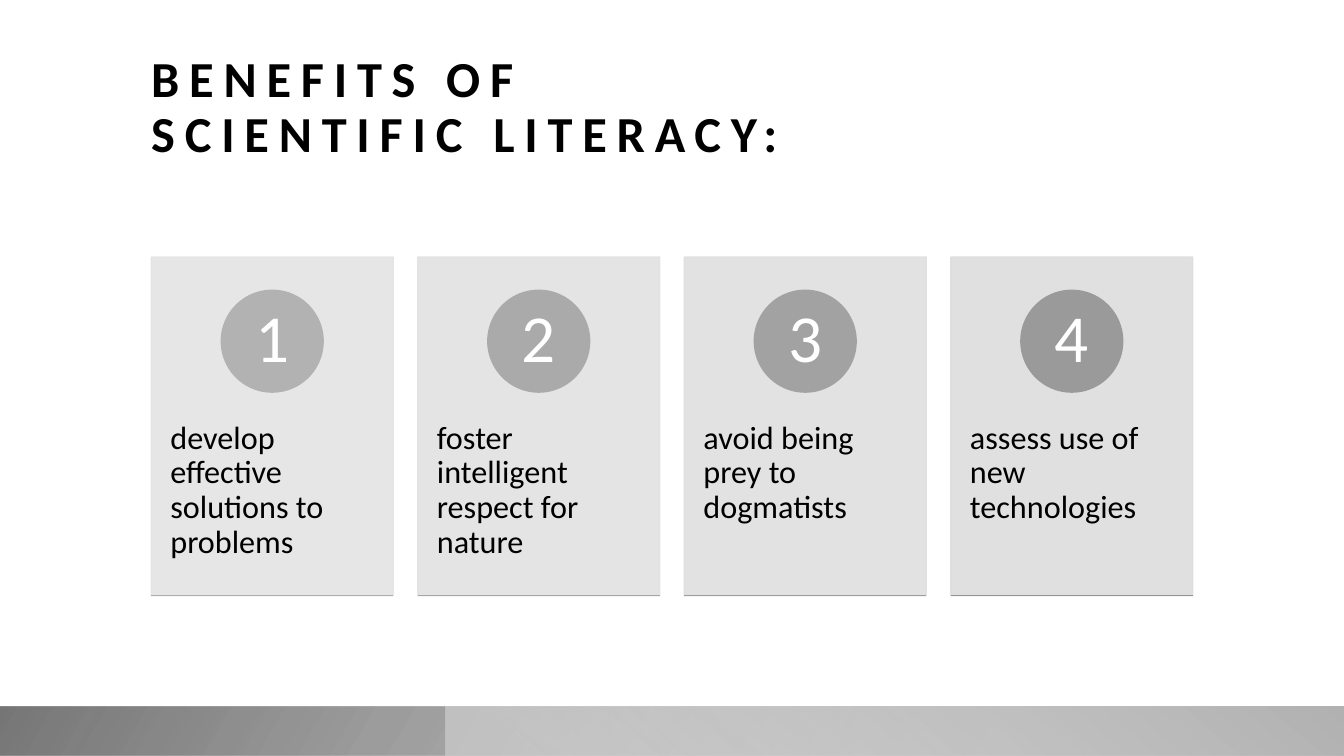
from lxml import etree
from pptx import Presentation
from pptx import util as u
from pptx.dml import color
from pptx.enum import shapes, text
from pptx.oxml import ns

FONT = "Calibri"
BENEFITS = [
    ("develop effective solutions to problems", "E4E4E4", "B2B2B2", "AEAEAE"),
    ("foster intelligent respect for nature", "E2E2E2", "AAAAAA", "A6A6A6"),
    ("avoid being prey to dogmatists", "DFDFDF", "A2A2A2", "9E9E9E"),
    ("assess use of new technologies", "DDDDDD", "9A9A9A", "969696"),
]


def paint(target, value):
    """Give a colour format a hex colour."""
    target.rgb = color.RGBColor.from_string(value)


def set_opacity(shape, percents):
    """Set the opacity of the colours of a shape in order."""
    for node, percent in zip(shape._element.spPr.iter(ns.qn("a:srgbClr")), percents):
        etree.SubElement(node, ns.qn("a:alpha")).set("val", str(percent * 1000))


def add_panel(page, kind, box, value):
    """Add a flat shape whose outline matches its fill."""
    panel = page.shapes.add_shape(kind, *map(u.Inches, box))
    panel.shadow.inherit = False
    panel.fill.solid()
    paint(panel.fill.fore_color, value)
    paint(panel.line.color, value)
    panel.line.width = u.Pt(1)
    return panel


def format_frame(frame, margins, anchor):
    """Set the margins, anchor and wrapping of a text frame."""
    frame.word_wrap = True
    frame.auto_size = text.MSO_AUTO_SIZE.NONE
    frame.vertical_anchor = anchor
    frame.margin_left = frame.margin_right = u.Inches(margins[0])
    frame.margin_top = frame.margin_bottom = u.Inches(margins[1])


def add_span(para, words, size, value, bold=False):
    """Add one formatted run to a paragraph."""
    span = para.add_run()
    span.text = words
    span.font.name = FONT
    span.font.size = u.Pt(size)
    span.font.bold = bold
    paint(span.font.color, value)
    return span


def add_label(page, box, words, size, value, margins, anchor, align):
    """Add a text box with a single paragraph."""
    label = page.shapes.add_textbox(*map(u.Inches, box))
    format_frame(label.text_frame, margins, anchor)
    para = label.text_frame.paragraphs[0]
    para.alignment = align
    para.line_spacing = 0.9
    add_span(para, words, size, value)


def add_title(page, box):
    """Place the two-line heading in the title placeholder."""
    title = page.shapes.title
    title.left, title.top, title.width, title.height = map(u.Inches, box)
    format_frame(title.text_frame, (0, 0), text.MSO_ANCHOR.BOTTOM)
    para = title.text_frame.paragraphs[0]
    para.alignment = text.PP_ALIGN.LEFT
    para.line_spacing = 0.9
    for index, words in enumerate(("BENEFITS OF ", "SCIENTIFIC LITERACY:")):
        if index:
            para.add_line_break()
        span = add_span(para, words, 36, "000000", bold=True)
        span.font._element.set("spc", "700")


def add_band(page, box, stops, angle, rotation=0):
    """Add a mirrored footer band with a translucent gradient."""
    band = page.shapes.add_shape(shapes.MSO_SHAPE.RECTANGLE, *map(u.Inches, box))
    band.shadow.inherit = False
    band.line.fill.background()
    band.rotation = rotation
    band._element.spPr.xfrm.set("flipH", "1")
    band.fill.gradient()
    band.fill.gradient_angle = 360 - angle
    for stop, (position, value, _) in zip(band.fill.gradient_stops, stops):
        stop.position = position
        paint(stop.color, value)
    set_opacity(band, [percent for _, _, percent in stops])


def add_footer(page, box):
    """Draw a dark band with a lighter one over its right part."""
    left, top, width, height = box
    inset = 4.42
    add_band(page, box, [(0.14, "808080", 28), (1, "5F5F5F", 85)], 150, 180)
    add_band(page, (left + inset, top, width - inset, height),
             [(0.09, "D1D1D1", 68), (0.99, "B2B2B2", 100)], 230)


def add_card(page, box, number, benefit):
    """Draw a numbered card with its text and base line."""
    left, top, width, height = box
    words, back, disc, base = benefit
    panel = add_panel(page, shapes.MSO_SHAPE.RECTANGLE, box, back)
    set_opacity(panel, (90, 90))
    add_label(page, (left, top + 1.27, width, 2.02), words, 23, "000000",
              (0.19, 0.36), text.MSO_ANCHOR.TOP, text.PP_ALIGN.LEFT)
    size = 1.01
    disc_left, disc_top = left + (width - size) / 2, top + 0.33
    add_panel(page, shapes.MSO_SHAPE.OVAL, (disc_left, disc_top, size, size), disc)
    inset = 0.15
    inner = size - 2 * inset
    add_label(page, (disc_left + inset, disc_top + inset, inner, inner), str(number),
              48, "FFFFFF", (0.08, 0.01), text.MSO_ANCHOR.MIDDLE, text.PP_ALIGN.CENTER)
    bottom = top + height
    ends = (left, bottom, left + width, bottom)
    line = page.shapes.add_connector(shapes.MSO_CONNECTOR.STRAIGHT, *map(u.Inches, ends))
    paint(line.line.color, base)
    line.line.width = u.Pt(1)
    etree.SubElement(line._element.spPr, ns.qn("a:effectLst"))


def add_cards(page, box):
    """Spread the benefit cards evenly over the box."""
    left, top, width, height = box
    card_width = 2.4
    step = (width - card_width) / (len(BENEFITS) - 1)
    for index, benefit in enumerate(BENEFITS):
        add_card(page, (left + index * step, top, card_width, height), index + 1, benefit)


def main():
    """Build the deck and save it."""
    deck = Presentation()
    deck.slide_width, deck.slide_height = u.Inches(13.33), u.Inches(7.5)
    page = deck.slides.add_slide(deck.slide_layouts[5])
    page.background.fill.solid()
    paint(page.background.fill.fore_color, "FFFFFF")
    add_title(page, (1.5, 0.52, 10.33, 1.1))
    add_footer(page, (0, 7.01, 13.33, 0.49))
    add_cards(page, (1.5, 2.55, 10.33, 3.36))
    deck.save("out.pptx")


if __name__ == "__main__":
    main()
